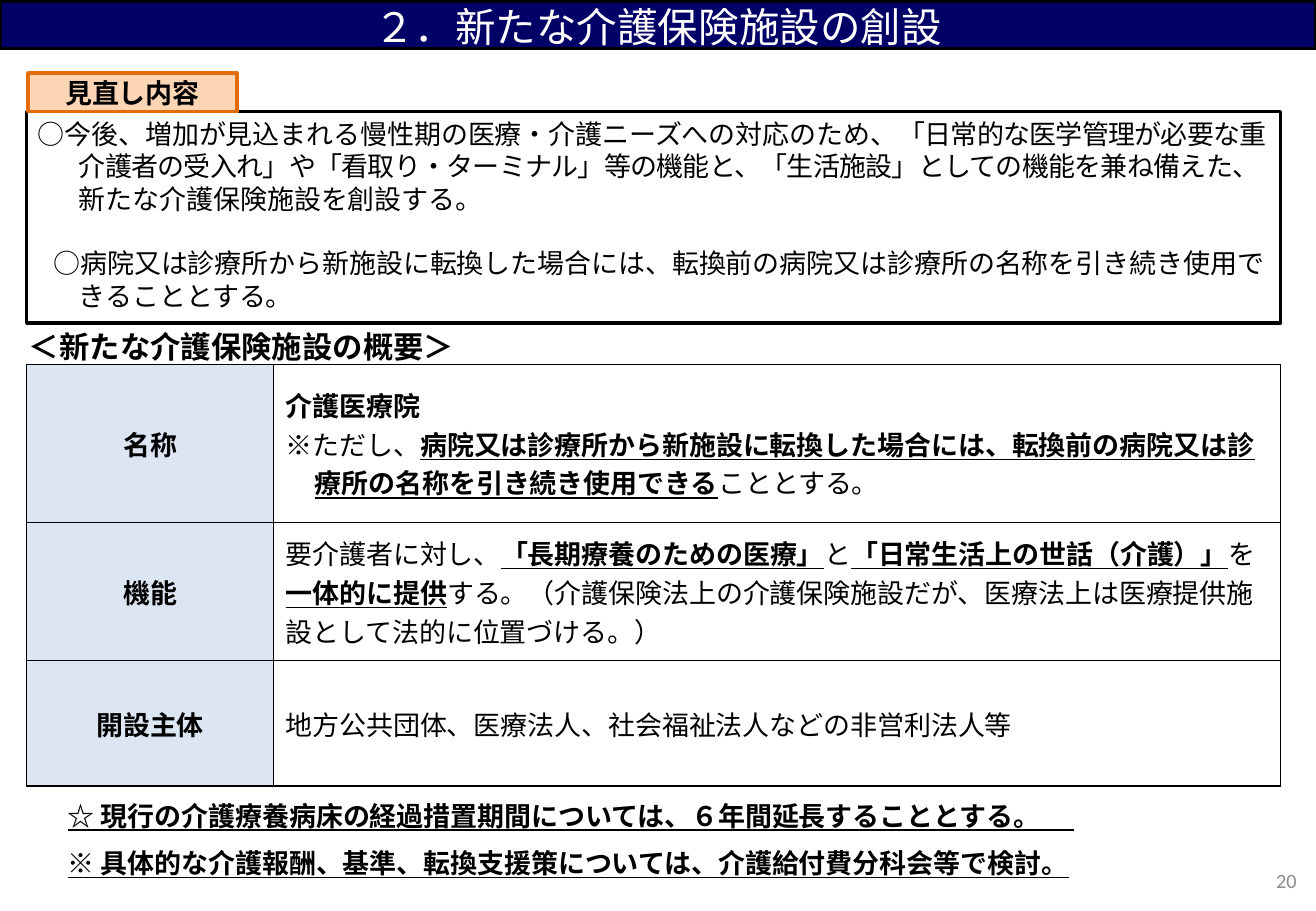
from lxml.etree import SubElement
from pptx import Presentation
from pptx.dml.color import RGBColor
from pptx.enum.shapes import MSO_SHAPE
from pptx.enum.text import MSO_ANCHOR, PP_ALIGN
from pptx.oxml.ns import qn
from pptx.util import Inches, Pt

CJK = "Noto Sans CJK JP"
BLACK = "000000"
WHITE = "FFFFFF"
STRONG = {"bold": True}
KEY = {"bold": True, "underline": True}


def color(hex_string):
    return RGBColor.from_string(hex_string)


def write(para, spans, size=16, font=CJK, ink=BLACK, align=PP_ALIGN.LEFT):
    para.alignment = align
    for text, style in spans:
        span = para.add_run()
        span.text = text
        span.font.size = Pt(size)
        span.font.name = style.get("font", font)
        span.font.bold = style.get("bold", False)
        span.font.underline = style.get("underline", False)
        span.font.color.rgb = color(ink)
        properties = span.font._element
        SubElement(properties, qn("a:ea")).set("typeface", CJK)
        if "spacing" in style:
            properties.set("spc", str(style["spacing"]))


def hang(para, left, indent):
    properties = para._p.get_or_add_pPr()
    properties.set("marL", str(Inches(left)))
    properties.set("indent", str(Inches(indent)))


def panel(page, left, top, width, height, fill, line, anchor):
    shape = page.shapes.add_shape(MSO_SHAPE.RECTANGLE, Inches(left), Inches(top),
                                  Inches(width), Inches(height))
    shape.shadow.inherit = False
    shape.fill.solid()
    shape.fill.fore_color.rgb = color(fill)
    shape.line.color.rgb = color(line)
    shape.line.width = Pt(2)
    shape.text_frame.word_wrap = True
    shape.text_frame.vertical_anchor = anchor
    return shape.text_frame


def label(page, left, top, width, height, spans, anchor=MSO_ANCHOR.TOP, **look):
    box = page.shapes.add_textbox(Inches(left), Inches(top), Inches(width), Inches(height))
    box.text_frame.word_wrap = True
    box.text_frame.vertical_anchor = anchor
    write(box.text_frame.paragraphs[0], spans, **look)


def title_bar(page, left, top, width, height):
    frame = panel(page, left, top, width, height, "000066", BLACK, MSO_ANCHOR.TOP)
    para = frame.paragraphs[0]
    para.line_spacing = Pt(26)
    write(para, [("２．新たな介護保険施設の創設", {})], size=24, ink=WHITE, align=PP_ALIGN.CENTER)


def review_section(page, left, top, width, height):
    tab_height = 0.32
    frame = panel(page, left, top + tab_height, width, height - tab_height,
                  WHITE, BLACK, MSO_ANCHOR.MIDDLE)
    frame.margin_left = frame.margin_right = frame.margin_top = 0
    frame.margin_bottom = Inches(0.05)
    points = [
        (-0.34, 0, [
            ("○今後、増加が見込まれる慢性期の医療・介護ニーズへの対応のため、", {}),
            ("「日常的な医学管理が必要な重介護者の受入れ」や「看取り・ターミナル」等の機能と、"
             "「生活施設」としての機能を兼ね備えた、", {"spacing": -40}),
            ("新たな介護保険施設を創設する。", {})]),
        (-0.21, 19.2, [
            ("○病院又は診療所から新施設に転換した場合には、転換前の病院又は診療所の名称を"
             "引き続き使用できることとする。", {})]),
    ]
    for index, (indent, gap, spans) in enumerate(points):
        para = frame.add_paragraph() if index else frame.paragraphs[0]
        hang(para, 0.43, indent)
        para.line_spacing = Pt(19.2)
        para.space_before = Pt(gap)
        write(para, spans)

    tab = panel(page, left + 0.01, top, 1.72, tab_height, "FCD5B5", "E46C0A", MSO_ANCHOR.MIDDLE)
    write(tab.paragraphs[0], [("見直し内容", STRONG)], font="Calibri", align=PP_ALIGN.CENTER)


def style_cell(cell, fill=None):
    cell.vertical_anchor = MSO_ANCHOR.MIDDLE
    properties = cell._tc.get_or_add_tcPr()
    for side in ("lnL", "lnR", "lnT", "lnB"):
        border = SubElement(properties, qn("a:" + side), w=str(Pt(1)))
        SubElement(SubElement(border, qn("a:solidFill")), qn("a:srgbClr"), val=BLACK)
    if fill:
        cell.fill.solid()
        cell.fill.fore_color.rgb = color(fill)
    else:
        cell.fill.background()


def outline_table(page, left, top, width, height):
    rows = [
        ("名称", 1.3, [
            [("介護医療院", STRONG)],
            [("※ただし、", {}),
             ("病院又は診療所から新施設に転換した場合には、転換前の病院又は診療所の名称を"
              "引き続き使用できる", KEY),
             ("こととする。", {})]]),
        ("機能", 1.14, [
            [("要介護者に対し、", {}), ("「長期療養のための医療」", KEY), ("と", {}),
             ("「日常生活上の世話（介護）」", KEY), ("を", {}), ("一体的に提供", KEY),
             ("する。（介護保険法上の介護保険施設だが、医療法上は医療提供施設として"
              "法的に位置づける。）", {})]]),
        ("開設主体", 1.03, [
            [("地方公共団体、医療法人、社会福祉法人などの非営利法人等", {})]]),
    ]
    head_width = 2.03
    table = page.shapes.add_table(len(rows), 2, Inches(left), Inches(top),
                                  Inches(width), Inches(height)).table
    table.first_row = table.horz_banding = False
    table.columns[0].width = Inches(head_width)
    table.columns[1].width = Inches(width - head_width)
    for index, (heading, row_height, lines) in enumerate(rows):
        table.rows[index].height = Inches(row_height)
        head, body = table.cell(index, 0), table.cell(index, 1)
        style_cell(head, "DCE6F2")
        style_cell(body)
        write(head.text_frame.paragraphs[0], [(heading, STRONG)], align=PP_ALIGN.CENTER)
        for number, spans in enumerate(lines):
            frame = body.text_frame
            para = frame.add_paragraph() if number else frame.paragraphs[0]
            if number:
                hang(para, 0.24, -0.24)
            write(para, spans)


def closing_notes(page, left, top, width, height):
    notes = [
        [("☆ ", KEY),
         ("現行の介護療養病床の経過措置期間については、６年間延長することとする。 ",
          {**KEY, "font": "Arial"}),
         ("　", KEY)],
        [("※ 具体的な介護報酬、基準、転換支援策については、介護給付費分科会等で検討。", KEY)],
    ]
    pitch = height / len(notes)
    for index, spans in enumerate(notes):
        label(page, left, top + index * pitch, width, 0.37, spans, font="Calibri")


def main():
    deck = Presentation()
    deck.slide_width, deck.slide_height = Inches(10.83), Inches(7.5)
    page = deck.slides.add_slide(deck.slide_layouts[6])
    title_bar(page, 0, 0.01, 10.83, 0.39)
    review_section(page, 0.22, 0.6, 10.32, 2.06)
    label(page, 0.14, 2.65, 3.86, 0.4, [("＜新たな介護保険施設の概要＞", STRONG)], size=18)
    outline_table(page, 0.22, 3, 10.32, 3.47)
    closing_notes(page, 0.46, 6.53, 10.08, 0.78)
    label(page, 8.24, 7.05, 2.53, 0.4, [("20", {})], anchor=MSO_ANCHOR.MIDDLE,
          size=12, font="Calibri", ink="8C8C8C", align=PP_ALIGN.RIGHT)
    deck.save("out.pptx")


if __name__ == "__main__":
    main()
